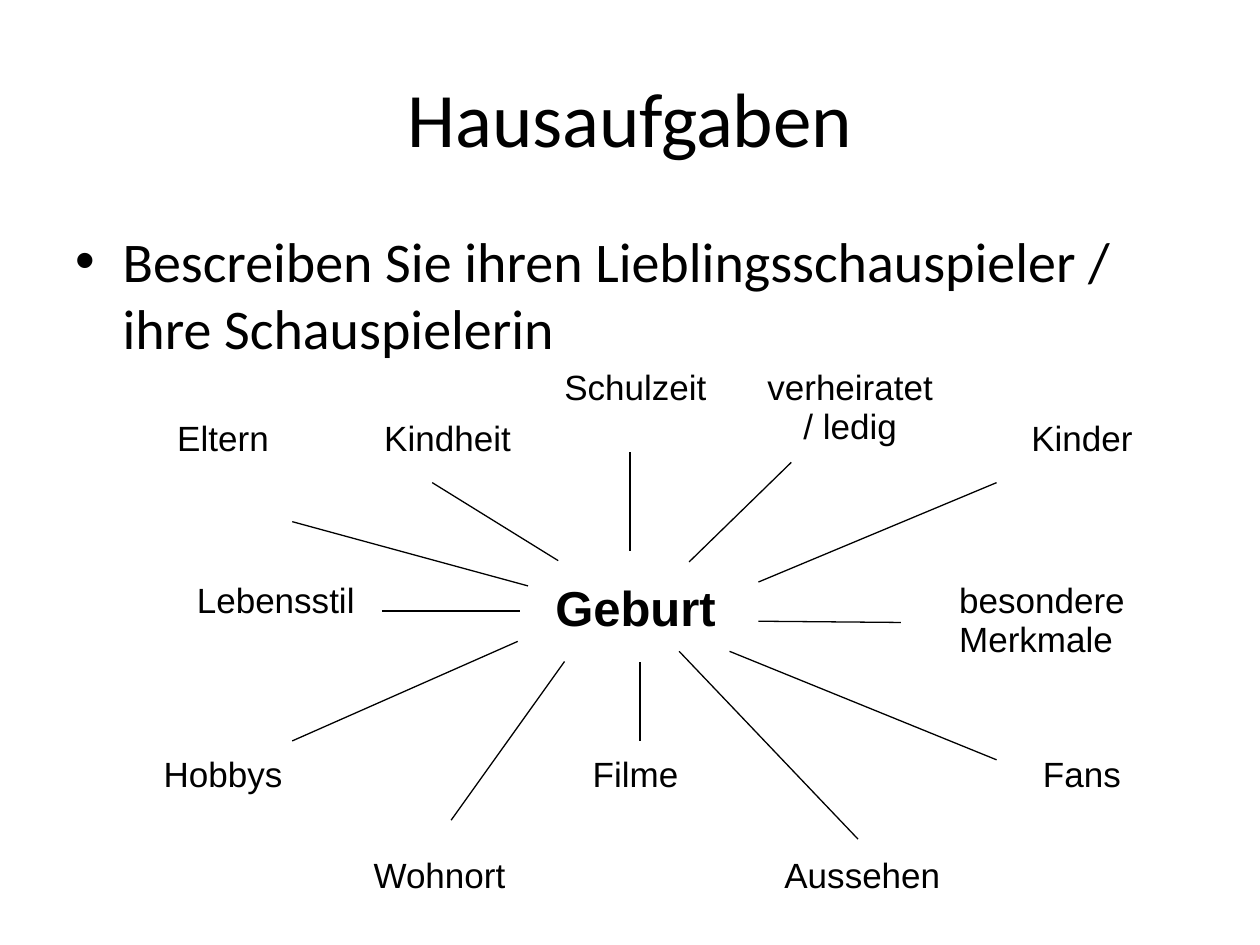
"""Build the homework slide with a mind map about a favourite actor."""
from collections import namedtuple

from lxml.etree import SubElement
from pptx import Presentation
from pptx.dml.color import RGBColor
from pptx.enum.shapes import MSO_CONNECTOR
from pptx.enum.text import MSO_ANCHOR, PP_ALIGN
from pptx.oxml.ns import qn
from pptx.util import Pt

Theme = namedtuple("Theme", "ink heading_font label_font title body center label line")
theme = Theme(RGBColor(0, 0, 0), "Calibri", "Arial", 44, 32, 28, 20, 0.75)


def format_paragraph(paragraph, font_name, size, alignment, bold=False):
    paragraph.alignment = alignment
    paragraph.font.name = font_name
    paragraph.font.size = Pt(size)
    paragraph.font.bold = bold
    paragraph.font.color.rgb = theme.ink


presentation = Presentation()
presentation.slide_width = Pt(720)
presentation.slide_height = Pt(540)
slide = presentation.slides.add_slide(presentation.slide_layouts[5])

title = slide.shapes.title
title.left, title.top, title.width, title.height = Pt(36), Pt(21.6), Pt(648), Pt(90)
title.text_frame.text = "Hausaufgaben"
title.text_frame.vertical_anchor = MSO_ANCHOR.MIDDLE
format_paragraph(title.text_frame.paragraphs[0], theme.heading_font, theme.title, PP_ALIGN.CENTER)

task = slide.shapes.add_textbox(Pt(36), Pt(126), Pt(648), Pt(356.4))
task.text_frame.word_wrap = True
task.text_frame.text = "Bescreiben Sie ihren Lieblingsschauspieler / ihre Schauspielerin"
task_paragraph = task.text_frame.paragraphs[0]
format_paragraph(task_paragraph, theme.heading_font, theme.body, PP_ALIGN.LEFT)
task_paragraph.space_before = Pt(6.4)
properties = task_paragraph._p.get_or_add_pPr()
properties.set("marL", str(Pt(27)))
properties.set("indent", str(-Pt(27)))
SubElement(properties, qn("a:buFont"), typeface="Arial")
SubElement(properties, qn("a:buChar"), char="•")

column_widths = [90.72, 35.28, 89.28, 12.96, 104.4, 12.96, 113.76, 26.64, 97.92]
row_heights = [86.4, 35.28, 70.56, 86.4, 35.28]
table = slide.shapes.add_table(
    len(row_heights), len(column_widths), Pt(82.08), Pt(210.96),
    Pt(sum(column_widths)), Pt(sum(row_heights)),
).table
table.first_row = False
table.horz_banding = False
for column, width in zip(table.columns, column_widths):
    column.width = Pt(width)
for row, height in zip(table.rows, row_heights):
    row.height = Pt(height)
for cell in table.iter_cells():
    cell.fill.background()
    cell.margin_left = cell.margin_right = Pt(5.4)
    cell.margin_top = cell.margin_bottom = 0
for first_column in (0, 7):
    table.cell(2, first_column).merge(table.cell(2, first_column + 1))

lowered = 29
topics = [
    (0, 0, "Eltern", PP_ALIGN.CENTER, lowered),
    (0, 2, "Kindheit", PP_ALIGN.RIGHT, lowered),
    (0, 4, "Schulzeit", PP_ALIGN.CENTER, 0),
    (0, 6, "verheiratet / ledig", PP_ALIGN.CENTER, 0),
    (0, 8, "Kinder", PP_ALIGN.CENTER, lowered),
    (2, 0, "Lebensstil", PP_ALIGN.RIGHT, 0),
    (2, 4, "Geburt", PP_ALIGN.CENTER, 0),
    (2, 7, "besondere Merkmale", PP_ALIGN.LEFT, 0),
    (3, 0, "Hobbys", PP_ALIGN.CENTER, lowered),
    (3, 4, "Filme", PP_ALIGN.CENTER, lowered),
    (3, 8, "Fans", PP_ALIGN.CENTER, lowered),
    (4, 2, "Wohnort", PP_ALIGN.LEFT, 0),
    (4, 6, "Aussehen", PP_ALIGN.RIGHT, 0),
]
for row_index, column_index, topic, alignment, top_margin in topics:
    cell = table.cell(row_index, column_index)
    cell.text = topic
    cell.margin_top = Pt(top_margin)
    is_center = topic == "Geburt"
    size = theme.center if is_center else theme.label
    paragraph = cell.text_frame.paragraphs[0]
    format_paragraph(paragraph, theme.label_font, size, alignment, is_center)
    paragraph.space_after = Pt(6)

spokes = [
    (257.8, 468.7, 322.6, 378),
    (393.8, 321.1, 452.2, 264.2),
    (360, 314.6, 360, 258.5),
    (433.4, 355, 514.8, 355.7),
    (388.1, 372.2, 490.3, 479.5),
    (167, 298.1, 301.7, 334.8),
    (218.2, 349.2, 297.4, 349.2),
    (416.9, 372.2, 569.5, 434.2),
    (365.8, 423.4, 365.8, 378),
    (167, 423.4, 295.9, 366.5),
    (433.4, 332.6, 569.5, 275.8),
    (319, 320.4, 247, 275.8),
]
for spoke in spokes:
    connector = slide.shapes.add_connector(MSO_CONNECTOR.STRAIGHT, *map(Pt, spoke))
    connector.line.color.rgb = theme.ink
    connector.line.width = Pt(theme.line)
    SubElement(connector._element.spPr, qn("a:effectLst"))

presentation.save("out.pptx")
